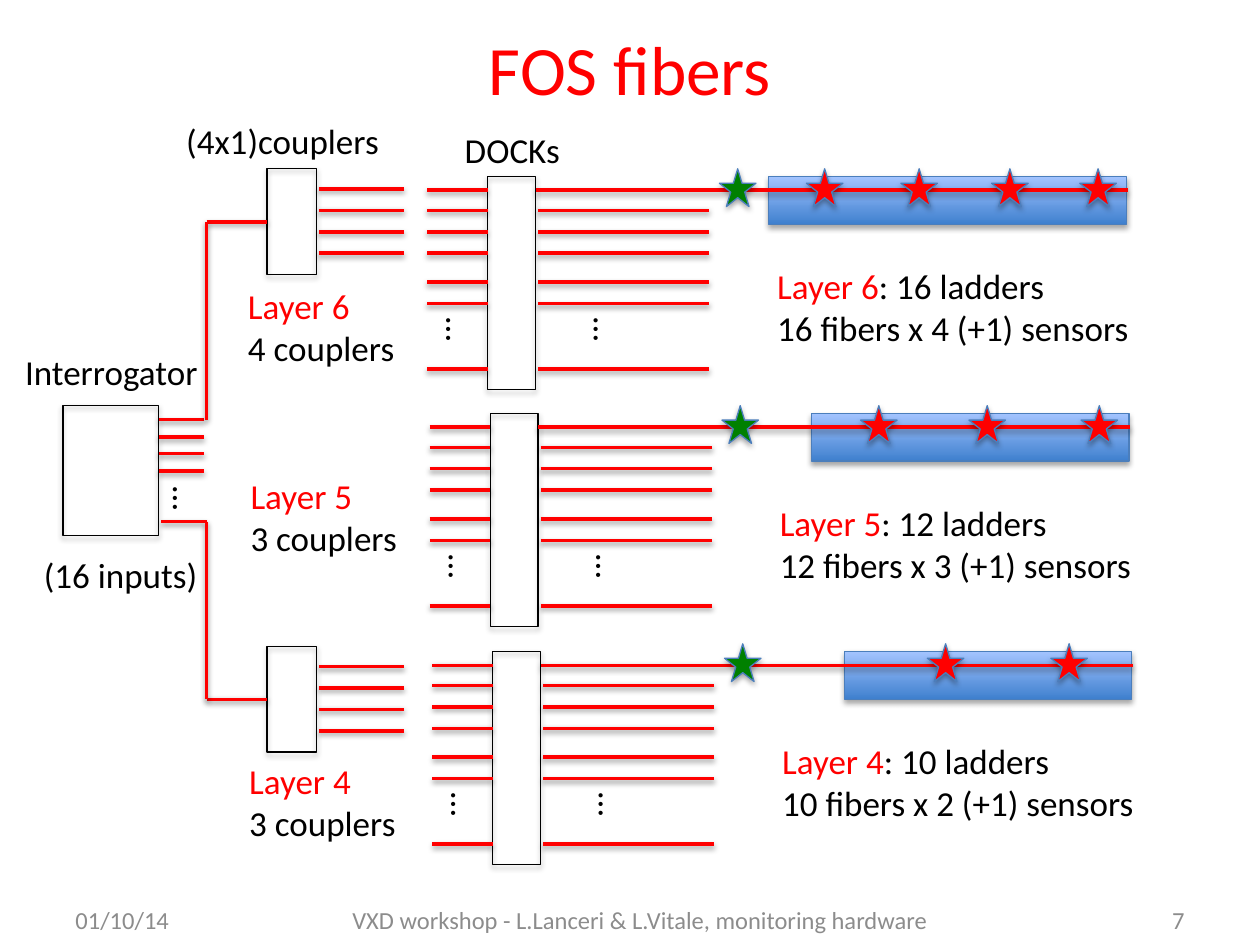
from lxml.etree import SubElement
from pptx import Presentation
from pptx.dml.color import RGBColor
from pptx.enum.shapes import MSO_CONNECTOR as Link, MSO_SHAPE as Form
from pptx.enum.text import MSO_ANCHOR as Anchor, PP_ALIGN as Align
from pptx.oxml.ns import qn
from pptx.util import Pt

PX = 9144
RED = RGBColor(0xFF, 0x00, 0x00)
GREEN = RGBColor(0x00, 0x80, 0x00)
BLACK = RGBColor(0x00, 0x00, 0x00)
GRAY = RGBColor(0x8C, 0x8C, 0x8C)
EDGE = RGBColor(0x4B, 0x7E, 0xBC)
DEEP = RGBColor(0x3F, 0x80, 0xCE)
PALE = RGBColor(0xA4, 0xC4, 0xFF)


def scale(*sizes):
    return [size * PX for size in sizes]


def shade(shape, dist, alpha):
    glow = SubElement(shape.element.spPr, qn("a:effectLst"))
    drop = SubElement(glow, qn("a:outerShdw"), blurRad=str(Pt(3.1)),
                      dist=str(Pt(dist)), dir="5400000", rotWithShape="0")
    tint = SubElement(drop, qn("a:srgbClr"), val="000000")
    SubElement(tint, qn("a:alpha"), val=str(alpha * 1000))


def fiber(slide, x1, y1, x2, y2):
    line = slide.shapes.add_connector(Link.STRAIGHT, *scale(x1, y1, x2, y2))
    line.line.color.rgb = RED
    line.line.width = Pt(2)
    shade(line, 1.6, 38)
    return line


def figure(slide, form, box, edge, fill=None):
    shape = slide.shapes.add_shape(form, *scale(*box))
    if fill is None:
        shape.fill.background()
    else:
        shape.fill.solid()
        shape.fill.fore_color.rgb = fill
    shape.line.color.rgb = edge
    shape.line.width = Pt(0.75)
    shade(shape, 1.8, 35)
    return shape


def label(slide, box, lines, size=20, align=Align.LEFT, anchor=Anchor.TOP, wrap=False):
    shape = slide.shapes.add_textbox(*scale(*box))
    frame = shape.text_frame
    frame.word_wrap = wrap
    frame.vertical_anchor = anchor
    for i, parts in enumerate(lines):
        para = frame.paragraphs[0] if i == 0 else frame.add_paragraph()
        para.alignment = align
        para.font.name = "Calibri"
        para.font.size = Pt(size)
        if len(parts) == 1:
            para.font.color.rgb = parts[0][1]
        for words, color in parts:
            run = para.add_run()
            run.text = words
            if len(parts) > 1:
                run.font.color.rgb = color
    return shape


def dots(slide, x, y):
    label(slide, (x, y, 40, 44), [[("…", BLACK)]]).rotation = 90


def star(slide, x, y, color):
    figure(slide, Form.STAR_5_POINT, (x, y, 29, 30), EDGE, color)


def layer(slide, x, y, name, count, width, stars):
    bar = figure(slide, Form.RECTANGLE, (x + 507 - width, y, width, 38), EDGE, PALE)
    bar.fill.gradient()
    bar.fill.gradient_angle = 90
    for stop, color in zip(bar.fill.gradient_stops, (DEEP, PALE)):
        stop.color.rgb = color
    figure(slide, Form.RECTANGLE, (x, y, 38, 169), BLACK)
    for i, drop in enumerate((11, 27, 44, 61, 84, 101, 153)):
        fiber(slide, x - 48, y + drop, x, y + drop)
        start, end = (40, 176) if i else (38, 508)
        fiber(slide, x + start, y + drop, x + end, y + drop)
    star(slide, x + 184, y - 6, GREEN)
    for left in stars:
        star(slide, x + left, y - 6, RED)
    label(slide, (x + 220, y + 65, 301, 77),
          [[(name, RED), (f": {count} ladders", BLACK)],
           [(f"{count} fibers x {len(stars)} (+1) sensors", BLACK)]])
    for left in (-42, 75):
        dots(slide, x + left, y + 100)


def coupler(slide, x, y):
    box = figure(slide, Form.RECTANGLE, (x, y, 39, 84), BLACK)
    fiber(slide, x - 48, y + 42, x, y + 42).end_connect(box, 1)
    for i in range(4):
        drop = y + 16 + 17 * i
        fiber(slide, x + 41, drop, x + 109, drop)


def reader(slide, x, y):
    figure(slide, Form.RECTANGLE, (x, y, 76, 103), BLACK)
    for drop in (11, 25, 38, 52):
        fiber(slide, x + 76, y + drop, x + 112, y + drop)
    fiber(slide, x + 78, y + 92, x + 114, y + 92)
    fiber(slide, x + 114, y - 146, x + 114, y + 11)
    fiber(slide, x + 114, y + 92, x + 114, y + 233)
    label(slide, (x - 40, y - 49, 158, 44), [[("Interrogator", BLACK)]])
    label(slide, (x - 25, y + 112, 143, 44), [[("(16 inputs)", BLACK)]])
    dots(slide, x + 78, y + 52)


def footer(slide, y):
    for x, width, words, align in (
            (50, 162, "01/10/14", Align.LEFT),
            (212, 592, "VXD workshop - L.Lanceri & L.Vitale, monitoring hardware", Align.CENTER),
            (822, 128, "7", Align.RIGHT)):
        label(slide, (x, y, width, 40), [[(words, GRAY)]], 14, align, Anchor.MIDDLE, True)


def main():
    deck = Presentation()
    deck.slide_width, deck.slide_height = scale(1000, 750)
    slide = deck.slides.add_slide(deck.slide_layouts[6])
    label(slide, (50, 14, 900, 80), [[("FOS fibers", RED)]], 39.6,
          Align.CENTER, Anchor.MIDDLE, True)
    layer(slide, 387, 140, "Layer 6", 16, 284, (253, 328, 400, 470))
    layer(slide, 389, 328, "Layer 5", 12, 252, (294, 380, 469))
    layer(slide, 391, 517, "Layer 4", 10, 228, (345, 443))
    for y in (134, 513):
        coupler(slide, 212, y)
    reader(slide, 50, 322)
    label(slide, (359, 97, 96, 44), [[("DOCKs", BLACK)]])
    label(slide, (138, 90, 174, 44), [[("(4x1)couplers", BLACK)]])
    for x, y, name, count in ((187, 221, "Layer 6", 4), (189, 372, "Layer 5", 3),
                              (188, 598, "Layer 4", 3)):
        label(slide, (x, y, 137, 77), [[(name, RED)], [(f"{count} couplers", BLACK)]])
    footer(slide, 710)
    deck.save("out.pptx")


if __name__ == "__main__":
    main()
